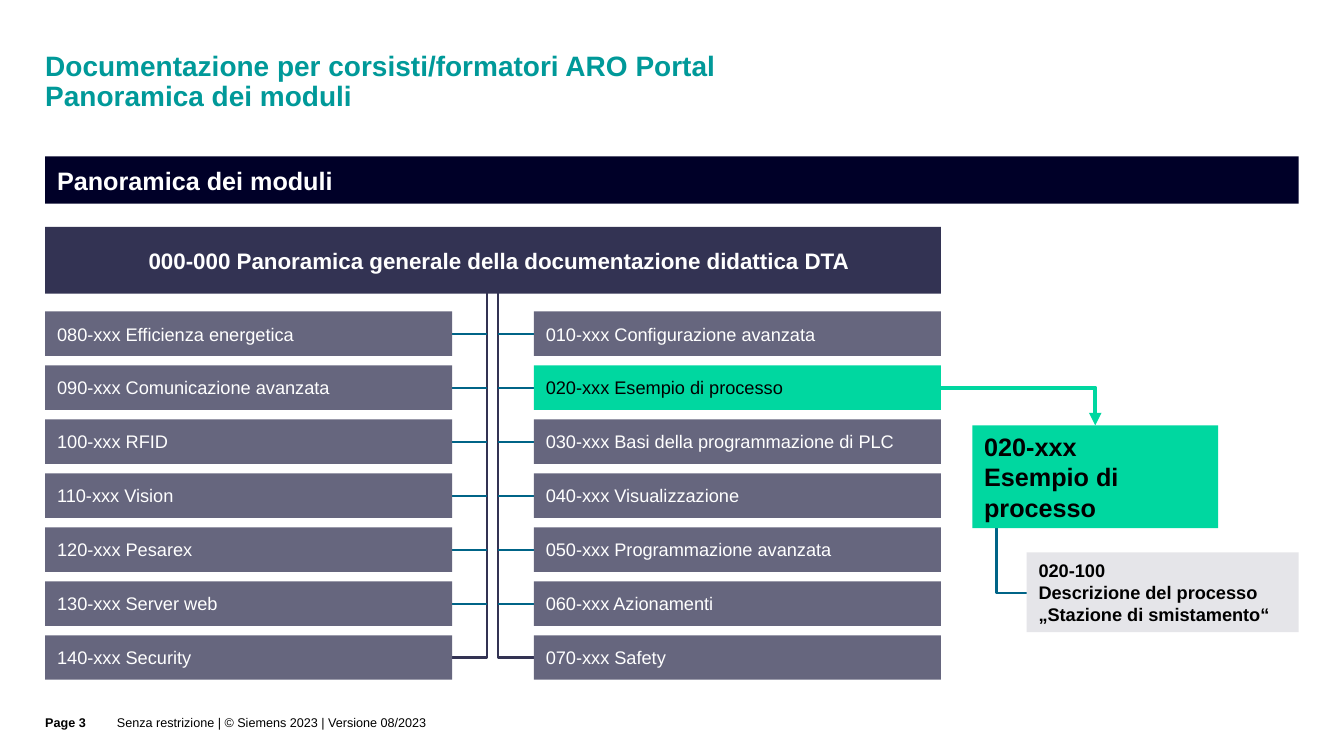
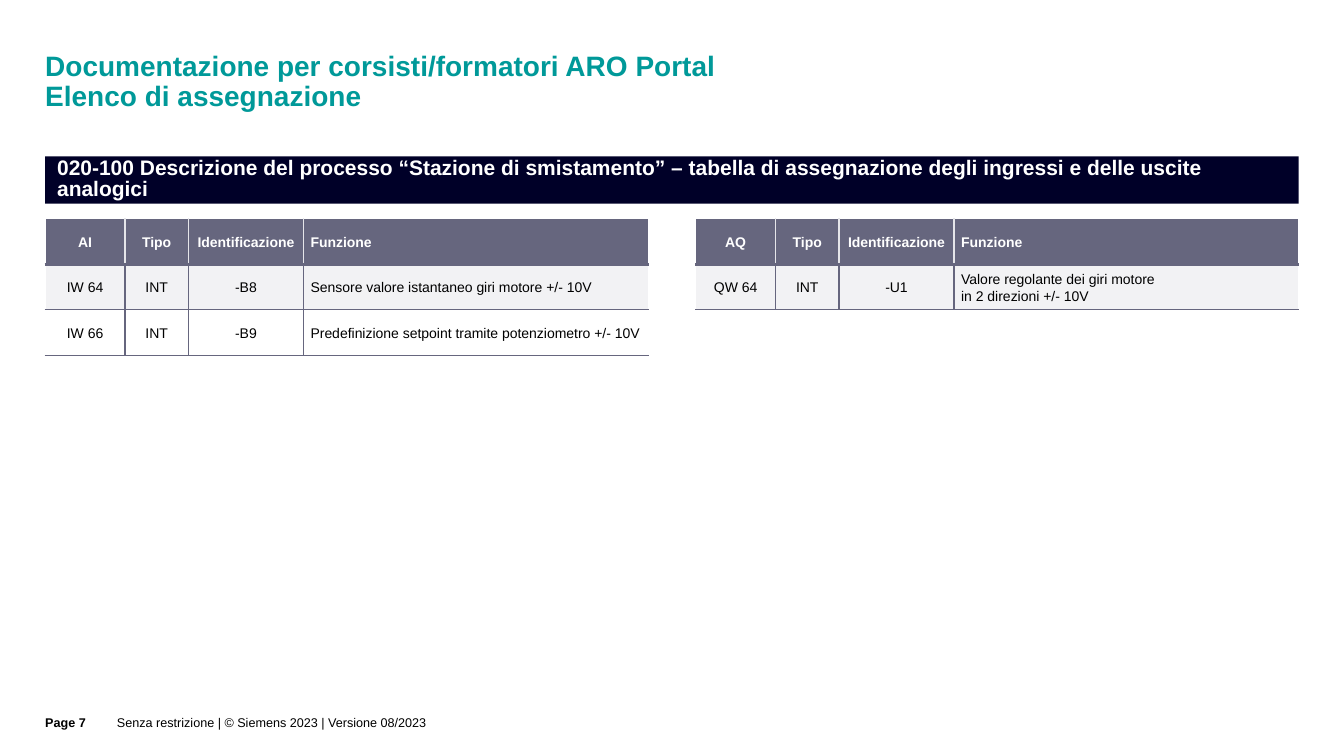
from copy import deepcopy

from lxml.etree import SubElement
from pptx import Presentation
from pptx.dml.color import RGBColor
from pptx.enum.shapes import MSO_CONNECTOR as CONN, MSO_SHAPE as SHAPE
from pptx.enum.text import MSO_ANCHOR as ANCHOR, PP_ALIGN as ALIGN
from pptx.oxml.ns import qn
from pptx.util import Cm, Pt

FONT = "Arial"
WHITE, BLACK, TEAL, NAVY = "FFFFFF", "000000", "009999", "000028"
INDIGO, SLATE, GREEN, BLUE = "333353", "66667E", "00D7A0", "006487"
PALE, MIST = "E5E5E9", "F2F2F4"

LEFT, WIDTH = 1.14, 31.6
TITLE = "Documentazione per corsisti/formatori ARO Portal"
FOOTER = "Senza restrizione | © Siemens 2023 | Versione 08/2023"

BOX_W, BOX_H, RIGHT_X = 10.26, 1.12, 13.46
ROW_TOP, ROW_STEP = 7.85, 1.36
STEM_TOP, STUB = 7.09, 1.57
LEFT_STEM, RIGHT_STEM = 12.27, 12.55
LEFT_MODULES = [
    "080-xxx Efficienza energetica", "090-xxx Comunicazione avanzata",
    "100-xxx RFID", "110-xxx Vision", "120-xxx Pesarex",
    "130-xxx Server web", "140-xxx Security",
]
RIGHT_MODULES = [
    "010-xxx Configurazione avanzata", "020-xxx Esempio di processo",
    "030-xxx Basi della programmazione di PLC", "040-xxx Visualizzazione",
    "050-xxx Programmazione avanzata", "060-xxx Azionamenti",
    "070-xxx Safety",
]
CURRENT = RIGHT_MODULES[1]

COLUMNS, ROW_H = [2.01, 1.6, 2.9, 8.69], 1.15
INPUTS = [
    ["AI", "Tipo", "Identificazione", "Funzione"],
    ["IW 64", "INT", "-B8", "Sensore valore istantaneo giri motore +/- 10V"],
    ["IW 66", "INT", "-B9",
     "Predefinizione setpoint tramite potenziometro +/- 10V"],
]
OUTPUTS = [
    ["AQ", "Tipo", "Identificazione", "Funzione"],
    ["QW 64", "INT", "-U1",
     "Valore regolante dei giri motore\nin 2 direzioni +/- 10V"],
]


def rgb(value):
    """Return the colour for a hex string."""
    return RGBColor.from_string(value)


def cm(*values):
    """Return the values as lengths in centimetres."""
    return [Cm(v) for v in values]


def write(tf, text, size=13, color=BLACK, bold=False, align=ALIGN.LEFT,
          spacing=None):
    """Write one formatted paragraph, with a line break at each newline."""
    p = tf.paragraphs[0]
    p.alignment = align
    if spacing:
        p.line_spacing = spacing
    lines = text.split("\n")
    for i, line in enumerate(lines):
        r = p.add_run()
        r.text = line
        r.font.name, r.font.size, r.font.bold = FONT, Pt(size), bold
        r.font.color.rgb = rgb(color)
        if i < len(lines) - 1:
            p.add_line_break()
            p._p[-1].append(deepcopy(r._r.rPr))


def set_frame(tf, margins, anchor=ANCHOR.MIDDLE):
    """Set wrapping, anchor and left, top, right and bottom margins."""
    tf.word_wrap = True
    tf.vertical_anchor = anchor
    (tf.margin_left, tf.margin_top,
     tf.margin_right, tf.margin_bottom) = cm(*margins)


def add_label(s, x, y, w, h, text, margins, anchor=ANCHOR.MIDDLE, **fmt):
    """Add a plain text box."""
    tf = s.shapes.add_textbox(*cm(x, y, w, h)).text_frame
    set_frame(tf, margins, anchor)
    write(tf, text, **fmt)


def add_box(s, x, y, w, h, text, fill, **fmt):
    """Add a filled rectangle with text."""
    sp = s.shapes.add_shape(SHAPE.RECTANGLE, *cm(x, y, w, h))
    sp.shadow.inherit = False
    sp.fill.solid()
    sp.fill.fore_color.rgb = rgb(fill)
    sp.line.fill.background()
    set_frame(sp.text_frame, (0.3, 0, 0, 0))
    write(sp.text_frame, text, **fmt)
    return sp


def style_line(sp, color, width):
    """Set the line colour and width of a shape."""
    sp.line.color.rgb = rgb(color)
    sp.line.width = Pt(width)


def add_path(s, points, color):
    """Add an open, unfilled path through the points."""
    start, *rest = [cm(*pt) for pt in points]
    builder = s.shapes.build_freeform(*start, scale=1.0)
    builder.add_line_segments(rest, close=False)
    sp = builder.convert_to_shape()
    sp.shadow.inherit = False
    sp.fill.background()
    style_line(sp, color, 1.5)


def add_line(s, x1, y1, x2, y2, color, width=1.5, kind=CONN.STRAIGHT):
    """Add a connector without a shadow."""
    c = s.shapes.add_connector(kind, *cm(x1, y1, x2, y2))
    style_line(c, color, width)
    SubElement(c._element.spPr, qn("a:effectLst"))
    return c


def add_arrow(s, source, target):
    """Add a bent arrow from a box's right side to another box's top."""
    c = add_line(s, 0, 0, 1, 1, GREEN, 3, CONN.ELBOW)
    c._element.spPr.find(qn("a:prstGeom")).set("prst", "bentConnector2")
    ln = c._element.spPr.find(qn("a:ln"))
    SubElement(ln, qn("a:tailEnd")).set("type", "triangle")
    c.begin_connect(source, 3)
    c.end_connect(target, 0)


def set_borders(cell, **sides):
    """Set cell borders, each given as (colour, width), in schema order."""
    tc_pr = cell._tc.get_or_add_tcPr()
    for i, side in enumerate(s for s in "LRTB" if s in sides):
        color, width = sides[side]
        ln = SubElement(tc_pr, qn(f"a:ln{side}"))
        ln.set("w", str(Pt(width)))
        fill = SubElement(ln, qn("a:solidFill"))
        SubElement(fill, qn("a:srgbClr")).set("val", color)
        tc_pr.insert(i, ln)


def cell_borders(row, col):
    """Return the borders of a cell from its place in the table."""
    inner = (PALE if row == 0 else SLATE, 1)
    sides = {
        "L": inner if col else (WHITE, 1),
        "T": [(WHITE, 1), (SLATE, 2.25)][row] if row < 2 else (SLATE, 1),
        "B": (SLATE, 1 if row else 2.25),
    }
    if col < len(COLUMNS) - 1:
        sides["R"] = inner
    return sides


def add_assignments(s, x, y, rows):
    """Add an assignment table with a header row."""
    tbl = s.shapes.add_table(len(rows), len(COLUMNS), *cm(
        x, y, sum(COLUMNS), ROW_H * len(rows))).table
    tbl.first_row = tbl.horz_banding = False
    for column, w in zip(tbl.columns, COLUMNS):
        column.width = Cm(w)
    for i, texts in enumerate(rows):
        tbl.rows[i].height = Cm(ROW_H)
        for j, text in enumerate(texts):
            cell = tbl.cell(i, j)
            cell.fill.solid()
            cell.fill.fore_color.rgb = rgb((SLATE, MIST, WHITE)[i])
            cell.vertical_anchor = ANCHOR.MIDDLE
            cell.margin_left = cell.margin_right = Cm(0.18)
            cell.margin_top = cell.margin_bottom = 0
            last = j == len(COLUMNS) - 1
            write(cell.text_frame, text, size=10, bold=i == 0, spacing=1.1,
                  color=BLACK if i else WHITE,
                  align=ALIGN.LEFT if last else ALIGN.CENTER)
            set_borders(cell, **cell_borders(i, j))


def add_slide(prs, subtitle, page, band, **fmt):
    """Add a blank slide with title, footer and band."""
    s = prs.slides.add_slide(prs.slide_layouts[6])
    add_label(s, LEFT, 1.32, 27.41, 1.6, f"{TITLE}\n{subtitle}",
              (0, 0, 0.89, 0.05), ANCHOR.TOP, size=20, color=TEAL,
              bold=True, spacing=0.9)
    foot = (0, 0, 0, 0.18)
    add_label(s, 2.95, 17.53, 25.6, 1.52, FOOTER, foot, size=9)
    add_label(s, LEFT, 17.53, 1.8, 1.52, f"Page {page}", foot, size=9,
              bold=True)
    add_box(s, LEFT, 3.94, WIDTH, 1.19, band, NAVY, color=WHITE, bold=True,
            **fmt)
    return s


def add_branch(s, x, stem, direction, modules):
    """Add a column of modules joined to its stem and return the boxes."""
    end = stem + direction * STUB
    tops = [ROW_TOP + i * ROW_STEP for i in range(len(modules))]
    *middles, last = [top + BOX_H / 2 for top in tops]
    add_path(s, [(stem, STEM_TOP), (stem, last), (end, last)], INDIGO)
    for y in middles:
        add_line(s, stem, y, end, y, BLUE)
    boxes = {}
    for top, text in zip(tops, modules):
        fill, color = (GREEN, BLACK) if text == CURRENT else (SLATE, WHITE)
        boxes[text] = add_box(s, x, top, BOX_W, BOX_H, text, fill,
                              color=color)
    return boxes


def build_overview(prs):
    """Build the module overview slide."""
    s = add_slide(prs, "Panoramica dei moduli", 3, "Panoramica dei moduli",
                  size=18)
    add_branch(s, LEFT, LEFT_STEM, -1, LEFT_MODULES)
    boxes = add_branch(s, RIGHT_X, RIGHT_STEM, 1, RIGHT_MODULES)
    add_box(s, LEFT, 5.72, 22.58, 1.68,
            "000-000 Panoramica generale della documentazione didattica DTA",
            INDIGO, size=16, color=WHITE, bold=True, align=ALIGN.CENTER)
    add_path(s, [(25.12, 11.73), (25.12, 14.94), (26.67, 14.94)], BLUE)
    add_box(s, 25.88, 13.92, 6.86, 2.01,
            "020-100\nDescrizione del processo\n„Stazione di smistamento“",
            PALE, bold=True)
    detail = add_box(s, 24.51, 10.72, 6.2, 2.59,
                     "020-xxx\nEsempio di processo", GREEN, size=18,
                     bold=True)
    add_arrow(s, boxes[CURRENT], detail)


def build_assignments(prs):
    """Build the analog assignment slide."""
    s = add_slide(prs, "Elenco di assegnazione", 7,
                  "020-100 Descrizione del processo “Stazione di "
                  "smistamento” – tabella di assegnazione degli ingressi "
                  "e delle uscite analogici", size=15, spacing=0.8)
    add_assignments(s, LEFT, 5.51, INPUTS)
    add_assignments(s, LEFT + WIDTH - sum(COLUMNS), 5.51, OUTPUTS)


def main():
    """Build and save the presentation."""
    prs = Presentation()
    prs.slide_width, prs.slide_height = cm(33.88, 19.05)
    build_overview(prs)
    build_assignments(prs)
    prs.save("out.pptx")


if __name__ == "__main__":
    main()
